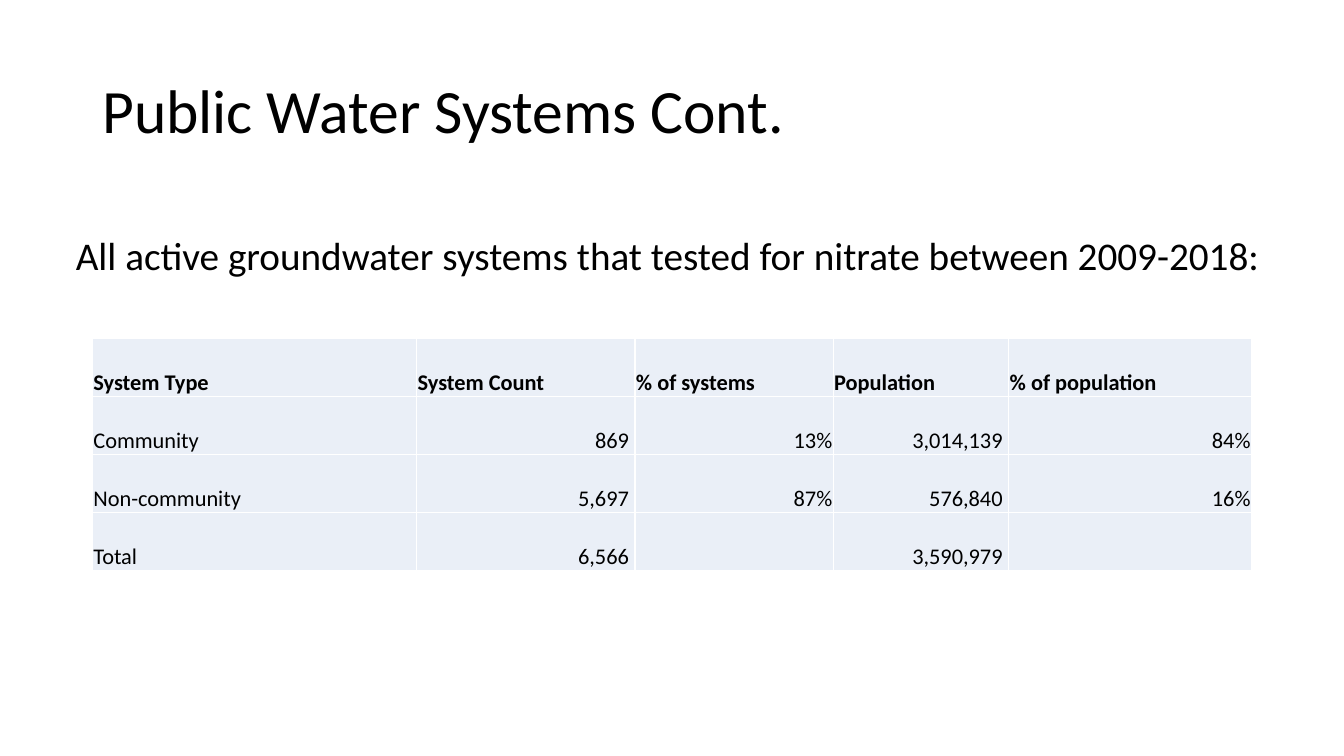
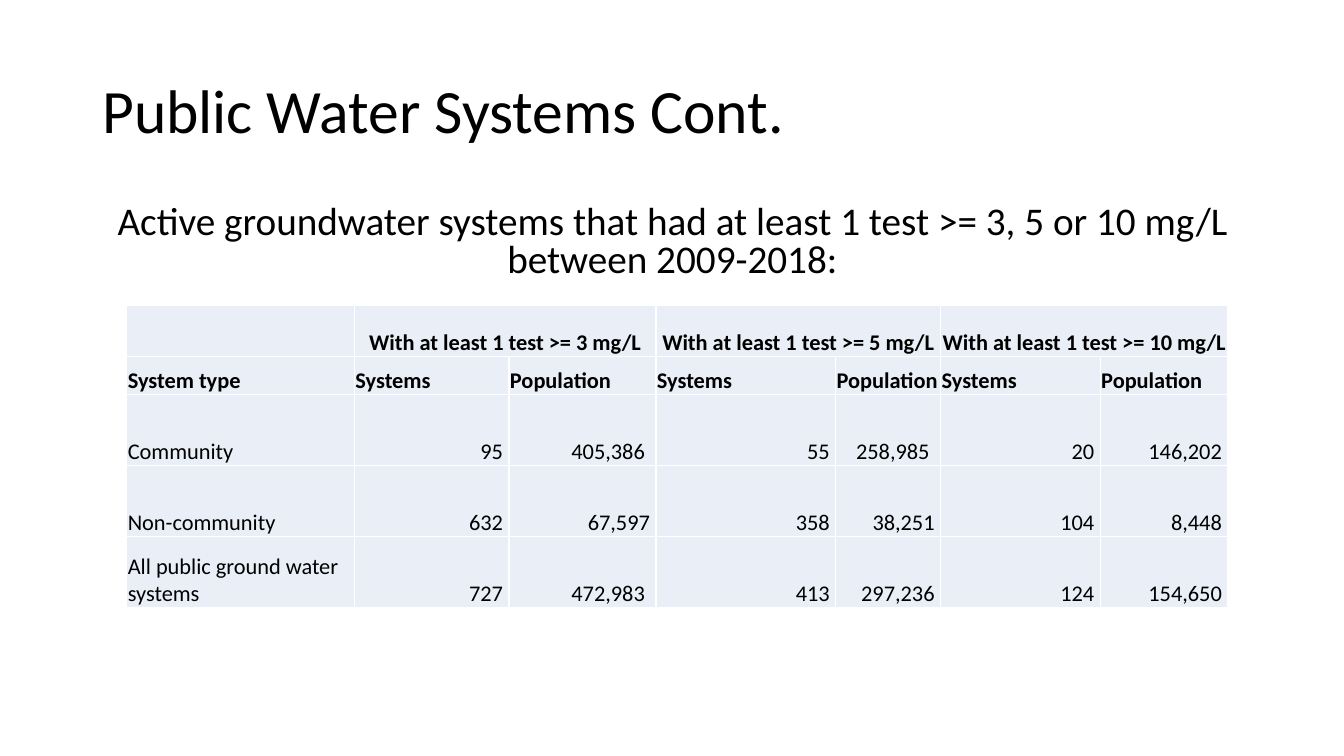
from lxml import etree
from pptx import Presentation
from pptx.dml.color import RGBColor
from pptx.enum.text import MSO_ANCHOR, PP_ALIGN
from pptx.oxml.ns import qn
from pptx.util import Inches, Pt

BLACK = RGBColor(0x00, 0x00, 0x00)
WHITE = RGBColor(0xFF, 0xFF, 0xFF)
PALE_BLUE = RGBColor(0xEA, 0xEF, 0xF7)
FONT = "Calibri"

# Grid: 160 columns by 90 rows on a 13.33 x 7.5 inch slide
COLUMNS, ROWS = 160, 90
UNIT = Inches(7.5) / ROWS


def grid(count):
    return round(count * UNIT)


class Deck:
    """Holds the shared style and the current slide."""

    def __init__(self):
        self.prs = Presentation()
        self.prs.slide_width, self.prs.slide_height = grid(COLUMNS), grid(ROWS)
        self.slide = None

    def new_slide(self, title):
        self.slide = self.prs.slides.add_slide(self.prs.slide_layouts[6])
        self.text(title, (11, 4.8, 138, 17.4), 44, anchor=MSO_ANCHOR.MIDDLE)

    def add_run(self, paragraph, words, size, bold=False):
        run = paragraph.add_run()
        run.text = words
        run.font.name, run.font.size, run.font.bold = FONT, Pt(size), bold
        run.font.color.rgb = BLACK

    def text(self, words, box, size, align=PP_ALIGN.LEFT,
             anchor=MSO_ANCHOR.TOP, spacing=0.9, before=0):
        frame = self.slide.shapes.add_textbox(*map(grid, box)).text_frame
        frame.word_wrap, frame.vertical_anchor = True, anchor
        paragraph = frame.paragraphs[0]
        paragraph.alignment, paragraph.line_spacing = align, spacing
        paragraph.space_before = Pt(before)
        self.add_run(paragraph, words, size)

    def lead(self, words, left, top, spacing):
        self.text(words, (left, top, 150.7, 10.8), 28, PP_ALIGN.CENTER,
                  spacing=spacing, before=10)

    def table(self, left, top, widths, heights, content, header_rows=1,
              group_span=1, wide_pad=()):
        """Headings are bold; figures are right-aligned with a small pad."""
        table = self.slide.shapes.add_table(
            len(heights), len(widths), grid(left), grid(top),
            grid(sum(widths)), grid(sum(heights))).table
        table.first_row = table.horz_banding = False
        for column, width in zip(table.columns, widths):
            column.width = grid(width)
        for row, height in zip(table.rows, heights):
            row.height = grid(height)
        if group_span > 1:
            for start in range(1, len(widths), group_span):
                table.cell(0, start).merge(table.cell(0, start + group_span - 1))
        for r, line in enumerate(content):
            for c, words in enumerate(line):
                heading = r < header_rows
                align, pad = PP_ALIGN.LEFT, 0.01
                if heading and r == 0 and group_span > 1:
                    align = PP_ALIGN.CENTER
                elif not heading and c > 0:
                    align = PP_ALIGN.RIGHT
                    if not words.endswith("%"):
                        pad = 0.11 if (r, c) in wide_pad else 0.06
                self.cell(table.cell(r, c), words, align, pad, heading)

    def cell(self, cell, words, align, pad, bold):
        cell.margin_left = cell.margin_top = Inches(0.01)
        cell.margin_right, cell.margin_bottom = Inches(pad), 0
        cell.vertical_anchor = MSO_ANCHOR.BOTTOM
        # Borders come before the fill in the cell properties
        properties = cell._tc.get_or_add_tcPr()
        for side in ("a:lnL", "a:lnR", "a:lnT", "a:lnB"):
            border = etree.SubElement(properties, qn(side), w=str(Pt(1)))
            paint = etree.SubElement(border, qn("a:solidFill"))
            etree.SubElement(paint, qn("a:srgbClr"), val=str(WHITE))
        cell.fill.solid()
        cell.fill.fore_color.rgb = PALE_BLUE
        if words:
            paragraph = cell.text_frame.paragraphs[0]
            paragraph.alignment = align
            self.add_run(paragraph, words, 16, bold)


def main():
    deck = Deck()
    title = "Public Water Systems Cont."

    # Slide 1: all tested systems
    deck.new_slide(title)
    deck.table(11, 40.3, [38.6, 26, 23.6, 20.9, 28.9], [6.9] * 4, [
        ["System Type", "System Count", "% of systems", "Population",
         "% of population"],
        ["Community", "869", "13%", "3,014,139", "84%"],
        ["Non-community", "5,697", "87%", "576,840", "16%"],
        ["Total", "6,566", "", "3,590,979", ""],
    ])
    deck.lead("All active groundwater systems that tested for nitrate "
              "between 2009-2018:", 4.1, 27.6, spacing=0.9)

    # Slide 2: systems above each test level
    deck.new_slide(title)
    deck.lead("Active groundwater systems that had at least 1 test "
              ">= 3, 5 or 10 mg/L between 2009-2018:", 4.7, 23.9, spacing=0.8)
    groups = [""]
    for level in (3, 5, 10):
        groups += [f"With at least 1 test >= {level} mg/L", ""]
    deck.table(15.1, 36.4, [27.1, 18.4, 17.5, 21.4, 12.5, 19, 15.2],
               [6, 4.6] + [8.45] * 3, [
        groups,
        ["System type"] + ["Systems", "Population"] * 3,
        ["Community", "95", "405,386", "55", "258,985", "20", "146,202"],
        ["Non-community", "632", "67,597", "358", "38,251", "104", "8,448"],
        ["All public ground water systems", "727", "472,983", "413",
         "297,236", "124", "154,650"],
    ], header_rows=2, group_span=2, wide_pad={(2, 2), (2, 4), (4, 2)})

    deck.prs.save("out.pptx")


if __name__ == "__main__":
    main()
